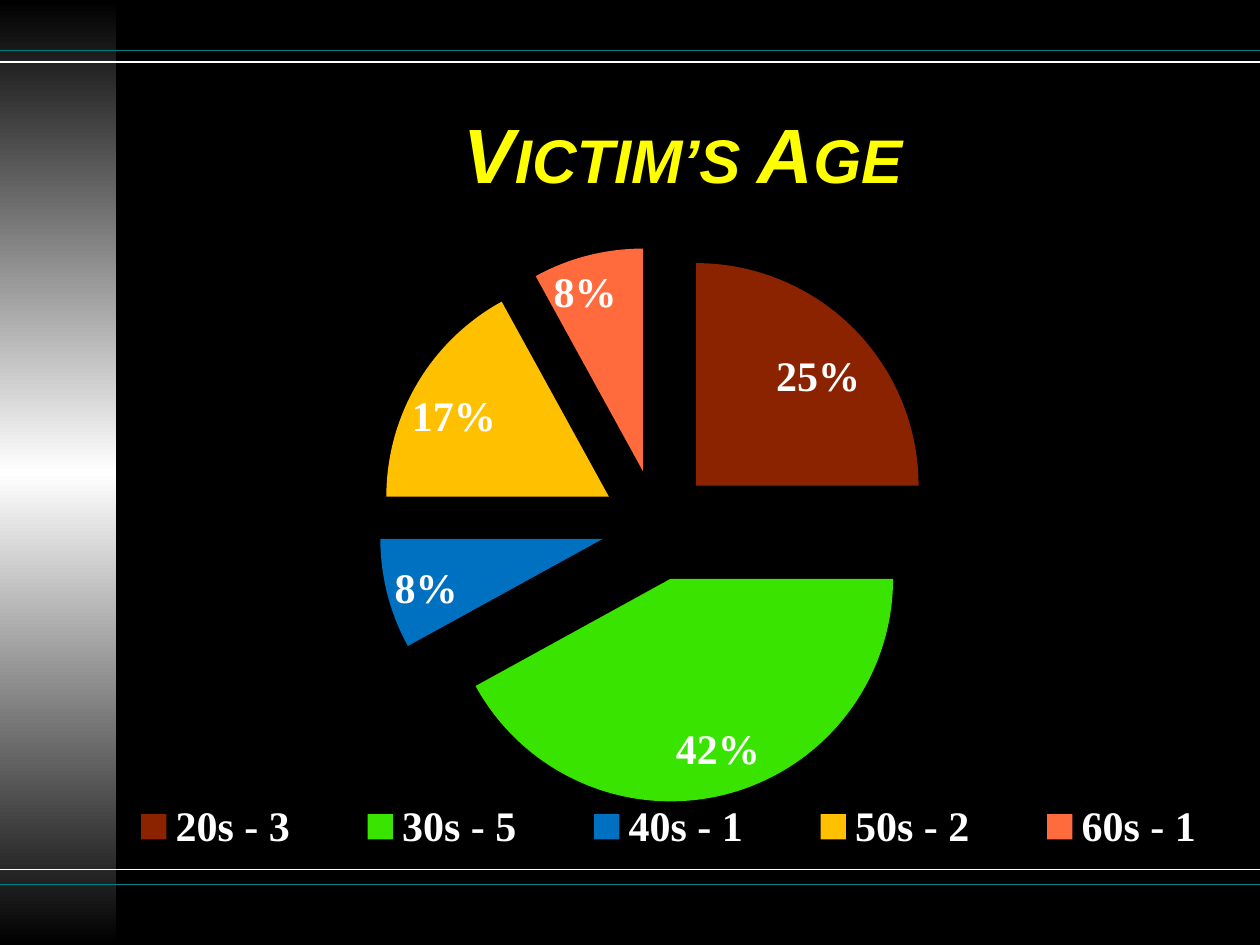
from lxml import etree
from pptx import Presentation
from pptx.chart.data import CategoryChartData
from pptx.dml.color import RGBColor
from pptx.enum import chart as ch, shapes, text
from pptx.oxml import ns
from pptx.util import Inches, Pt

BLACK = RGBColor(0x00, 0x00, 0x00)
WHITE = RGBColor(0xFF, 0xFF, 0xFF)
TEAL = RGBColor(0x00, 0x80, 0x80)
YELLOW = RGBColor(0xFF, 0xFF, 0x00)
BROWN = RGBColor(0x8B, 0x22, 0x00)
GREEN = RGBColor(0x39, 0xE5, 0x00)
BLUE = RGBColor(0x00, 0x70, 0xC0)
AMBER = RGBColor(0xFF, 0xC0, 0x00)
CORAL = RGBColor(0xFF, 0x6B, 0x3C)


def set_font(font, **values):
    for name, value in values.items():
        if name == "color":
            font.color.rgb = value
        else:
            setattr(font, name, value)


def manual_layout(**values):
    """Return a c:layout element placed by fractions of the chart area."""
    layout = etree.Element(ns.qn("c:layout"))
    manual = etree.SubElement(layout, ns.qn("c:manualLayout"))
    for tag, value in values.items():
        etree.SubElement(manual, ns.qn(f"c:{tag}"), val=str(value))
    return layout


prs = Presentation()
prs.slide_width, prs.slide_height = Inches(10), Inches(7.5)
slide = prs.slides.add_slide(prs.slide_layouts[6])
slide.background.fill.solid()
slide.background.fill.fore_color.rgb = BLACK

# Side band fading from black to white and back
band = slide.shapes.add_shape(shapes.MSO_SHAPE.RECTANGLE, 0, 0, Inches(0.92), Inches(7.5))
band.shadow.inherit = False
band.line.fill.background()
band.fill.gradient()
band.fill.gradient_angle = 270
stops = band.fill._fill._gradFill.gsLst
stops.clear()
for position, color in ((0, BLACK), (50000, WHITE), (100000, BLACK)):
    stop = etree.SubElement(stops, ns.qn("a:gs"), pos=str(position))
    etree.SubElement(stop, ns.qn("a:srgbClr"), val=str(color))

# Rules above and below the content
for y, color in ((0.4, TEAL), (0.49, WHITE), (6.9, WHITE), (7.02, TEAL)):
    rule = slide.shapes.add_connector(
        shapes.MSO_CONNECTOR.STRAIGHT, 0, Inches(y), Inches(10), Inches(y))
    rule.line.color.rgb = color
    rule.line.width = Pt(1)
    etree.SubElement(rule._element.spPr, ns.qn("a:effectLst"))

# Title
title = slide.shapes.add_textbox(Inches(1.17), Inches(0.59), Inches(8.5), Inches(1.25))
title.text_frame.word_wrap = True
title.text_frame.vertical_anchor = text.MSO_ANCHOR.MIDDLE
heading = title.text_frame.paragraphs[0]
heading.alignment = text.PP_ALIGN.CENTER
run = heading.add_run()
run.text = "Victim’s Age"
set_font(run.font, name="Arial", size=Pt(44), bold=True, italic=True, color=YELLOW)
run.font._element.set("cap", "small")

# Pie chart of age groups: label, share, colour, shift of the percentage
ages = (
    ("20s - 3", 25, BROWN, (0.01, 0.03)),
    ("30s - 5", 42, GREEN, (0.03, -0.02)),
    ("40s - 1", 8, BLUE, (0, 0.03)),
    ("50s - 2", 17, AMBER, (-0.01, 0.01)),
    ("60s - 1", 8, CORAL, (-0.03, 0.01)),
)
age_data = CategoryChartData()
age_data.categories = [age[0] for age in ages]
age_data.add_series("Series 1", [age[1] for age in ages])
pie = slide.shapes.add_chart(
    ch.XL_CHART_TYPE.PIE, Inches(0.52), Inches(1.8), Inches(9.48), Inches(5.32), age_data).chart
pie.has_title = False
set_font(pie.font, name="Times New Roman", size=Pt(18), color=WHITE)

plot = pie.plots[0]
plot.vary_by_categories = True
series = plot.series[0]
label_font = dict(name="Times New Roman", size=Pt(24), bold=True, color=WHITE)
labels = series.data_labels
labels.show_percentage = True
labels.show_value = False
labels.number_format = "0%"
labels.number_format_is_linked = False
labels.position = ch.XL_LABEL_POSITION.INSIDE_END
set_font(labels.font, **label_font)

for index, (_, _, color, (shift_x, shift_y)) in enumerate(ages):
    point = series.points[index]
    point.format.fill.solid()
    point.format.fill.fore_color.rgb = color
    set_font(point.data_label.font, **label_font)
    point.data_label.position = ch.XL_LABEL_POSITION.INSIDE_END
    percentage = labels._element.findall(ns.qn("c:dLbl"))[index]
    percentage.find(ns.qn("c:idx")).addnext(manual_layout(x=shift_x, y=shift_y))
    percentage.find(ns.qn("c:showVal")).set("val", "0")
    percentage.find(ns.qn("c:showPercent")).set("val", "1")
explosion = etree.Element(ns.qn("c:explosion"), val="25")
series._element.find(ns.qn("c:dPt")).addprevious(explosion)

pie.has_legend = True
legend = pie.legend
legend.position = ch.XL_LEGEND_POSITION.TOP
legend.include_in_layout = False
set_font(legend.font, **label_font)

plot_area = pie._chartSpace.chart.plotArea
for old_layout in plot_area.findall(ns.qn("c:layout")):
    plot_area.remove(old_layout)
plot_area.insert(0, manual_layout(
    layoutTarget="inner", xMode="edge", yMode="edge", x=0.02, y=0.03, w=0.95, h=0.83))
for old_layout in legend._element.findall(ns.qn("c:layout")):
    legend._element.remove(old_layout)
legend._element.find(ns.qn("c:legendPos")).addnext(manual_layout(
    xMode="edge", yMode="edge", x=0.01, y=0.85, w=0.99, h=0.09))

prs.save("out.pptx")
